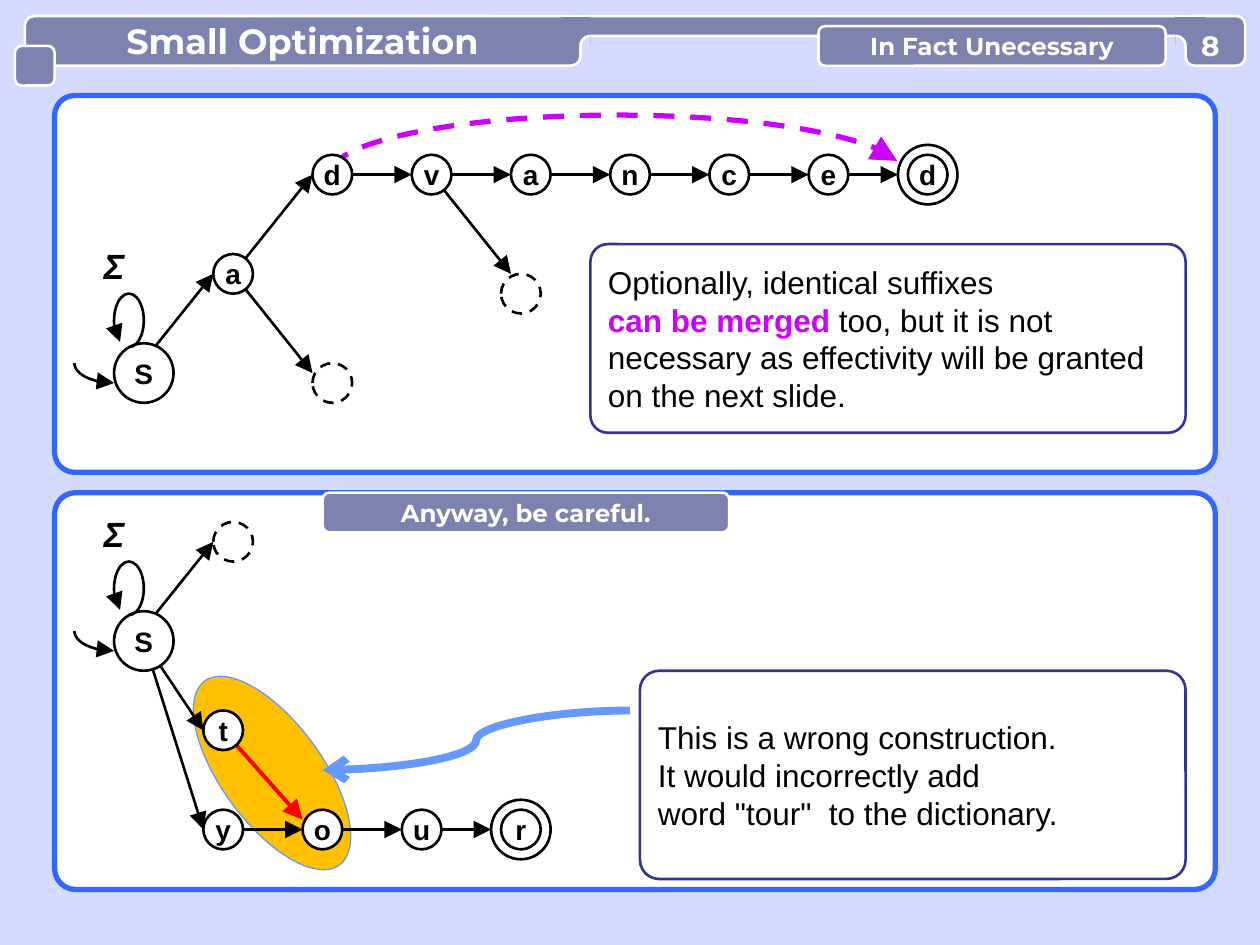
from dataclasses import dataclass
from itertools import pairwise
from typing import Any, NamedTuple

from lxml.etree import SubElement
from pptx import Presentation
from pptx.dml.color import RGBColor
from pptx.enum.dml import MSO_LINE
from pptx.enum.shapes import MSO_CONNECTOR, MSO_SHAPE
from pptx.enum.text import MSO_ANCHOR, MSO_AUTO_SIZE, PP_ALIGN
from pptx.oxml.ns import qn
from pptx.util import Pt

LAVENDER = RGBColor(0xD5, 0xDA, 0xFF)
SLATE = RGBColor(0x7D, 0x83, 0xAF)
WHITE = RGBColor(0xFF, 0xFF, 0xFF)
BLACK = RGBColor(0, 0, 0)
BLUE = RGBColor(0x33, 0x66, 0xFF)
LIGHT_BLUE = RGBColor(0x66, 0x99, 0xFF)
NAVY = RGBColor(0x33, 0x33, 0x99)
ORANGE = RGBColor(0xFF, 0xC0, 0x00)
RED = RGBColor(0xFF, 0, 0)
MAGENTA = RGBColor(0xCC, 0, 0xFF)

UNIT = 5.67  # drawing grid in points
STEP = 10 * UNIT  # distance between neighbouring states
RADIUS = 2 * UNIT
BIG_RADIUS = 3 * UNIT

Point = tuple[float, float]


class Box(NamedTuple):
    left: float
    top: float
    width: float
    height: float


class Run(NamedTuple):
    text: str
    font: dict[str, Any]
    color: RGBColor = BLACK


class Node(NamedTuple):
    label: str
    x: float
    y: float
    kind: str = "state"  # state, start, final or open

    @property
    def radius(self) -> float:
        return BIG_RADIUS if self.kind in ("start", "final") else RADIUS


@dataclass
class Edge:
    source: Node
    target: Node
    offset: Point | None = None  # arrow tip from the target's centre; left edge if None
    color: RGBColor = BLACK
    weight: float = 1.5
    shift: float = 0  # start from the source's centre, sideways


NODE_FONT = {"name": "Arial", "size": Pt(16), "bold": True}
SIGMA_FONT = {"name": "Arial", "size": Pt(20), "bold": True, "italic": True}
BODY_FONT = {"name": "Arial", "size": Pt(18), "bold": False}
STRONG_FONT = {**BODY_FONT, "bold": True}
TITLE_FONT = {"name": "Montserrat", "size": Pt(20), "bold": True}
NUMBER_FONT = {**TITLE_FONT, "size": Pt(16)}
LABEL_FONT = {**TITLE_FONT, "size": Pt(14)}
CENTERED = {"vertical_anchor": MSO_ANCHOR.MIDDLE, "word_wrap": False}
NO_MARGINS = {f"margin_{side}": 0 for side in ("left", "top", "right", "bottom")}
LARGE_TRIANGLE = {"type": "triangle", "w": "lg", "len": "lg"}
OPEN_ARROW = {"type": "arrow"}


def apply(target: Any, values: dict[str, Any]) -> None:
    for name, value in values.items():
        setattr(target, name, value)


def set_line(shape: Any, color: RGBColor | None, weight: float = 1.5,
             dashed: bool = False, **ends: dict[str, str]) -> None:
    """Format an outline; ends maps headEnd or tailEnd to an arrow format."""
    if color is None:
        shape.line.fill.background()
        return
    shape.line.color.rgb = color
    shape.line.width = Pt(weight)
    if dashed:
        shape.line.dash_style = MSO_LINE.DASH
    for end, arrow in ends.items():
        SubElement(shape.element.spPr.find(qn("a:ln")), qn(f"a:{end}"), arrow)


def set_fill(shape: Any, color: RGBColor | None) -> None:
    if color is None:
        shape.fill.background()
    else:
        shape.fill.solid()
        shape.fill.fore_color.rgb = color


def write(shape: Any, lines: list[list[Run]], align: PP_ALIGN = PP_ALIGN.CENTER,
          **frame_format: Any) -> None:
    frame = shape.text_frame
    apply(frame, {**CENTERED, **frame_format})
    for index, runs in enumerate(lines):
        paragraph = frame.add_paragraph() if index else frame.paragraphs[0]
        paragraph.alignment = align
        for text, font, color in runs:
            run = paragraph.add_run()
            run.text = text
            apply(run.font, font)
            run.font.color.rgb = color


def draw_shape(slide: Any, kind: MSO_SHAPE, box: Box, fill: RGBColor | None,
               line: RGBColor | None = None, weight: float = 1.5,
               corner: float | None = None, **line_format: Any) -> Any:
    shape = slide.shapes.add_shape(kind, *map(Pt, box))
    shape.shadow.inherit = False
    if corner is not None:
        shape.adjustments[0] = corner
    set_fill(shape, fill)
    set_line(shape, line, weight, **line_format)
    return shape


def draw_arc(slide: Any, center: Point, radii: Point, angles: Point,
             fill: RGBColor | None = None, line: RGBColor = BLACK, **line_format: Any) -> None:
    """Draw an elliptic arc clockwise between two angles in degrees."""
    (x, y), (rx, ry) = center, radii
    arc = draw_shape(slide, MSO_SHAPE.ARC, Box(x - rx, y - ry, 2 * rx, 2 * ry),
                     fill, line, **line_format)
    for index, angle in enumerate(angles):
        arc.adjustments[index] = angle * 0.6


def draw_panel(slide: Any, box: Box) -> None:
    draw_shape(slide, MSO_SHAPE.ROUNDED_RECTANGLE, box, WHITE, BLUE, 3, corner=0.053)


def draw_tab(slide: Any, box: Box, corner: float = 0.17, label: str = "") -> None:
    tab = draw_shape(slide, MSO_SHAPE.ROUNDED_RECTANGLE, box, SLATE, WHITE, corner=corner)
    if label:
        write(tab, [[Run(label, LABEL_FONT, WHITE)]])


def draw_callout(slide: Any, box: Box, lines: list[list[Run]]) -> None:
    callout = draw_shape(slide, MSO_SHAPE.ROUNDED_RECTANGLE, box, WHITE, NAVY, corner=0.092)
    write(callout, lines, PP_ALIGN.LEFT)


def draw_connector(slide: Any, kind: MSO_CONNECTOR, start: Point, end: Point,
                   color: RGBColor, weight: float = 1.5, **ends: dict[str, str]) -> None:
    connector = slide.shapes.add_connector(kind, *map(Pt, (*start, *end)))
    set_line(connector, color, weight, **ends)
    SubElement(connector.element.spPr, qn("a:effectLst"))


def draw_joint(slide: Any, x: float, side: int, top: float) -> None:
    """Join a header tab edge at x to the thin bar on its side (1 right, -1 left)."""
    outer, inner = x + side * UNIT, x - side * 2 * UNIT
    draw_shape(slide, MSO_SHAPE.RECTANGLE, Box(min(outer, inner), top, 3 * UNIT, 3 * UNIT), SLATE)
    draw_connector(slide, MSO_CONNECTOR.STRAIGHT, (inner, top), (outer, top), WHITE)
    draw_arc(slide, (outer, top + 3 * UNIT), (UNIT, UNIT),
             (180, 270) if side > 0 else (270, 0), LAVENDER, WHITE)


def draw_edge(slide: Any, edge: Edge) -> None:
    dx, dy = edge.offset or (-edge.target.radius, 0)
    draw_connector(slide, MSO_CONNECTOR.STRAIGHT, (edge.source.x + edge.shift, edge.source.y),
                   (edge.target.x + dx, edge.target.y + dy),
                   edge.color, edge.weight, tailEnd=LARGE_TRIANGLE)


def draw_node(slide: Any, node: Node) -> None:
    is_open = node.kind == "open"
    radii = (BIG_RADIUS, RADIUS) if node.kind == "final" else (node.radius,)
    for radius in radii:
        box = Box(node.x - radius, node.y - radius, 2 * radius, 2 * radius)
        circle = draw_shape(slide, MSO_SHAPE.OVAL, box, None if is_open else WHITE,
                            BLACK, dashed=is_open)
    if node.label:
        write(circle, [[Run(node.label, NODE_FONT)]])


def draw_start_marks(slide: Any, start: Node) -> None:
    """Draw the entry arrow, the self-loop and its Σ label."""
    draw_arc(slide, (start.x - 3 * UNIT, start.y - UNIT), (4 * UNIT, 2 * UNIT),
             (90, 180), headEnd=LARGE_TRIANGLE)
    draw_arc(slide, (start.x - 1.5 * UNIT, start.y - 30.1), (1.5 * UNIT, 15.3),
             (112.4, 90), headEnd=LARGE_TRIANGLE)
    box = Box(start.x - 28.2, start.y - 73.5, 4 * UNIT, 4 * UNIT)
    sigma = draw_shape(slide, MSO_SHAPE.RECTANGLE, box, WHITE)
    write(sigma, [[Run("Σ", SIGMA_FONT)]], word_wrap=True,
          vertical_anchor=MSO_ANCHOR.TOP, **NO_MARGINS)


def draw_automaton(slide: Any, nodes: list[Node], edges: list[Edge]) -> None:
    for edge in edges:
        draw_edge(slide, edge)
    for node in nodes:
        draw_node(slide, node)
        if node.kind == "start":
            draw_start_marks(slide, node)


def make_row(word: str, x: float, y: float) -> list[Node]:
    last = len(word) - 1
    return [Node(letter, x + index * STEP, y, "final" if index == last else "state")
            for index, letter in enumerate(word)]


def draw_suffix_automaton(slide: Any) -> None:
    start = Node("S", 82.2, 213.2, "start")
    a = Node("a", start.x + 9 * UNIT, start.y - STEP)
    row = make_row("dvanced", a.x + STEP, a.y - STEP)
    low = Node("", row[0].x, start.y + UNIT, "open")
    high = Node("", row[1].x + 9 * UNIT, a.y + 2 * UNIT, "open")
    draw_arc(slide, (352.8, row[0].y), (29 * UNIT, 6 * UNIT), (181.5, 357.2),
             line=MAGENTA, weight=3, dashed=True, tailEnd=LARGE_TRIANGLE)
    edges = [Edge(start, a, shift=-UNIT), Edge(a, row[0]), Edge(a, low, (-RADIUS, -UNIT)),
             Edge(row[1], high, (-UNIT, -RADIUS)), *(Edge(*pair) for pair in pairwise(row))]
    draw_automaton(slide, [start, a, *row, low, high], edges)


def draw_wrong_automaton(slide: Any) -> None:
    start = Node("S", 82.2, 366.3, "start")
    branch = Node("", start.x + 9 * UNIT, start.y - STEP, "open")
    t = Node("t", start.x + 8 * UNIT, start.y + 9 * UNIT)
    row = make_row("your", t.x, t.y + STEP)
    edges = [Edge(start, branch, shift=-UNIT), Edge(start, t), Edge(start, row[0]),
             *(Edge(*pair) for pair in pairwise(row)),
             Edge(t, row[1], (-RADIUS, -UNIT), RED, 2.25)]
    draw_automaton(slide, [start, branch, t, *row], edges)


def draw_header(slide: Any) -> None:
    top = 9.2
    title_box = Box(14.2, top, 317.5, 28.3)
    draw_tab(slide, title_box, 0.188)
    draw_tab(slide, Box(331.7, top, 351.5, 11.3), 0.5)
    draw_joint(slide, 331.7, 1, top)
    draw_tab(slide, Box(8.5, 26.2, 22.7, 22.7))
    draw_tab(slide, Box(677.5, top, 34, 28.3))
    draw_joint(slide, 677.5, -1, top)
    draw_tab(slide, Box(467.7, 14.9, 198.4, 22.7), label="In Fact Unecessary")
    number = slide.shapes.add_textbox(*map(Pt, (677.5, 16.2, 28.3, 19.4)))
    write(number, [[Run("8", NUMBER_FONT, WHITE)]], word_wrap=True, **NO_MARGINS)
    title = slide.shapes.title
    apply(title, dict(zip(Box._fields, map(Pt, title_box))))
    write(title, [[Run("Small Optimization", TITLE_FONT, WHITE)]], auto_size=MSO_AUTO_SIZE.NONE)
    slide.shapes.element.append(title.element)  # bring in front of its tab


def main() -> None:
    presentation = Presentation()
    apply(presentation, {"slide_width": Pt(720), "slide_height": Pt(540)})
    slide = presentation.slides.add_slide(presentation.slide_layouts[5])
    set_fill(slide.background, LAVENDER)

    draw_panel(slide, Box(31.2, 281.5, 663.3, 226.8))
    highlight = draw_shape(slide, MSO_SHAPE.OVAL, Box(126.7, 376.6, 57.6, 130.3),
                           ORANGE, LIGHT_BLUE, 0.75)
    highlight.rotation = 323.8
    draw_panel(slide, Box(31.2, 54.6, 663.3, 215.3))
    draw_wrong_automaton(slide)
    draw_callout(slide, Box(365.7, 383.3, 311.8, 119), [
        [Run(text, BODY_FONT)] for text in (
            "This is a wrong construction.", "It would incorrectly add",
            'word "tour"  to the dictionary.')])
    draw_suffix_automaton(slide)
    draw_callout(slide, Box(337.4, 139.5, 340.1, 107.8), [
        [Run("Optionally, identical suffixes", BODY_FONT)],
        [Run("can be merged ", STRONG_FONT, MAGENTA), Run("too, but it is not", BODY_FONT)],
        [Run("necessary as effectivity will be granted", BODY_FONT)],
        [Run("on the next slide.", BODY_FONT)]])
    draw_header(slide)
    draw_connector(slide, MSO_CONNECTOR.CURVE, (360, 406), (184.3, 440),
                   LIGHT_BLUE, 4.5, tailEnd=OPEN_ARROW)
    draw_tab(slide, Box(184.3, 281.5, 232.4, 22.7), label="Anyway, be careful.")
    presentation.save("out.pptx")


if __name__ == "__main__":
    main()
